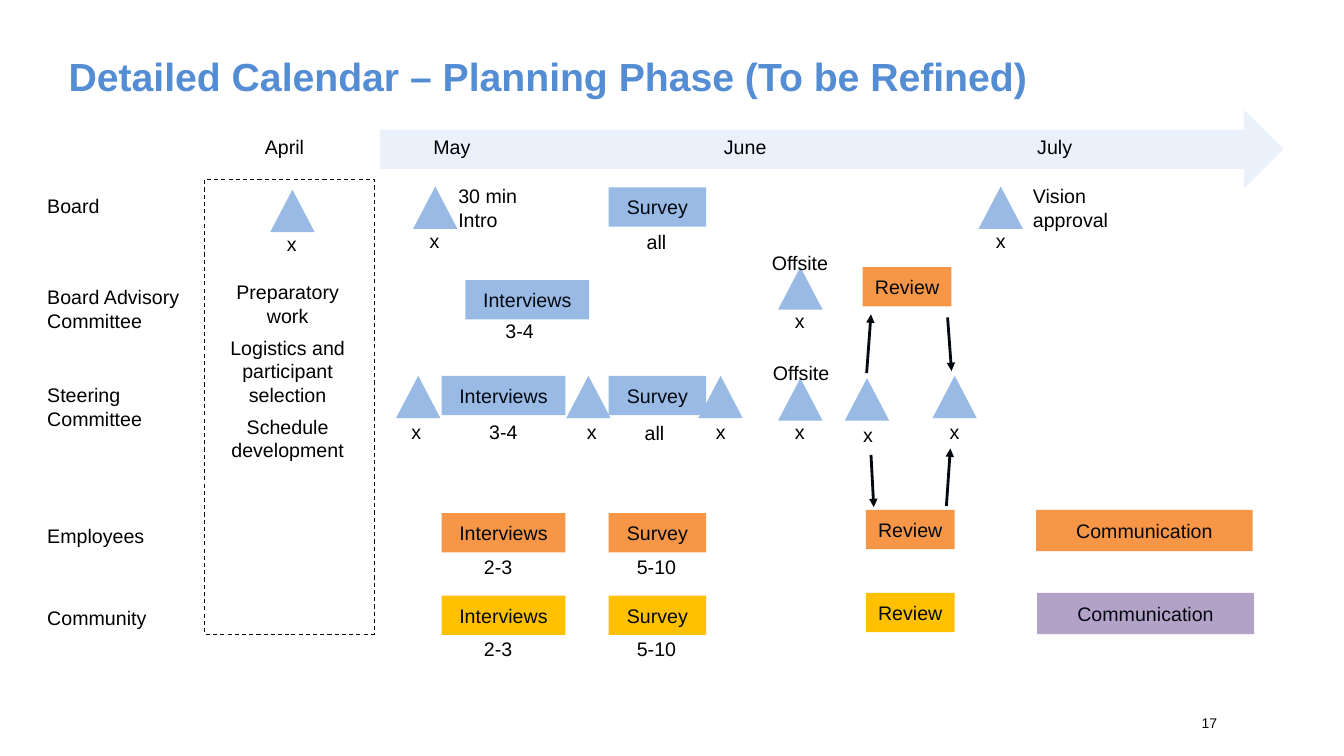
"""Build the planning phase calendar slide."""
from lxml import etree
from pptx import Presentation
from pptx import util as u
from pptx.dml.color import RGBColor
from pptx.enum import dml, shapes, text
from pptx.oxml import ns

COLORS = {
    "title": "548DD4", "number": "03070C", "text": "000000", "ink": "040910",
    "band": "EAF1FA", "blue": "98BAE5", "orange": "F79646", "gold": "FFC000",
    "purple": "B3A2C7",
}
LEFT, CENTER = text.PP_ALIGN.LEFT, text.PP_ALIGN.CENTER

presentation = Presentation()
presentation.slide_width = u.Cm(33.87)
presentation.slide_height = u.Cm(19.05)
slide = presentation.slides.add_slide(presentation.slide_layouts[6])


def add_text(left, top, width, height, paragraphs, align=LEFT, size=14, color="text", after=6):
    box = slide.shapes.add_textbox(u.Cm(left), u.Cm(top), u.Cm(width), u.Cm(height))
    frame = box.text_frame
    frame.word_wrap = True
    for index, content in enumerate(paragraphs):
        paragraph = frame.add_paragraph() if index else frame.paragraphs[0]
        paragraph.text = content
        paragraph.alignment = align
        paragraph.space_after = u.Pt(after)
        paragraph.font.name = "Arial"
        paragraph.font.size = u.Pt(size)
        paragraph.font.color.rgb = RGBColor.from_string(COLORS[color])
    return frame


def add_block(kind, left, top, width, height, fill, label=""):
    shape = slide.shapes.add_shape(kind, u.Cm(left), u.Cm(top), u.Cm(width), u.Cm(height))
    shape.shadow.inherit = False
    shape.line.fill.background()
    if fill:
        shape.fill.solid()
        shape.fill.fore_color.rgb = RGBColor.from_string(COLORS[fill])
    else:
        shape.fill.background()
    if label:
        shape.text_frame.vertical_anchor = text.MSO_ANCHOR.MIDDLE
        paragraph = shape.text_frame.paragraphs[0]
        paragraph.text = label
        paragraph.alignment = CENTER
        paragraph.font.name = "Arial"
        paragraph.font.size = u.Pt(14)
        paragraph.font.color.rgb = RGBColor.from_string(COLORS["ink"])
    return shape


title = add_text(1.73, 1.32, 28.78, 1.27, ["Detailed Calendar – Planning Phase (To be Refined)"],
                 size=28, color="title", after=0)
title.paragraphs[0].font.bold = True
number = add_text(30.28, 17.7, 1.12, 1.02, ["17"], size=10, color="number", after=0)
number.vertical_anchor = text.MSO_ANCHOR.MIDDLE
for frame in (title, number):
    frame.margin_left = frame.margin_top = frame.margin_bottom = 0
title.margin_right = 0

add_block(shapes.MSO_SHAPE.RIGHT_ARROW, 9.58, 2.77, 22.76, 1.98, "band")
for month, left in (("April", 4.72), ("May", 8.94), ("June", 16.33), ("July", 24.13)):
    add_text(left, 3.28, 4.9, 0.86, [month], CENTER)

groups = (
    ("Board", 4.75, 0.86),
    ("Board Advisory Committee", 7.06, 1.45),
    ("Steering\nCommittee", 9.53, 1.45),
    ("Employees", 13.08, 0.86),
    ("Community", 15.14, 0.86),
)
for group, top, height in groups:
    add_text(0.94, top, 4.9, height, [group])

preparation = add_block(shapes.MSO_SHAPE.RECTANGLE, 5.16, 4.52, 4.27, 11.46, None)
preparation.line.color.rgb = RGBColor.from_string(COLORS["ink"])
preparation.line.width = u.Pt(0.75)
preparation.line.dash_style = dml.MSO_LINE.DASH
add_text(5.13, 6.93, 4.24, 5.69,
         ["Preparatory work", "Logistics and participant selection", "Schedule development"],
         CENTER)

meetings = (
    (6.81, 4.78, 6.53, 5.72),
    (10.41, 4.7, 10.13, 5.64),
    (24.66, 4.7, 24.4, 5.64),
    (19.61, 6.73, 19.33, 7.67),
    (9.98, 9.47, 9.67, 10.46),
    (14.27, 9.47, 14.09, 10.46),
    (17.6, 9.47, 17.34, 10.46),
    (19.61, 9.53, 19.33, 10.46),
    (21.29, 9.53, 21.05, 10.52),
    (23.5, 9.47, 23.23, 10.46),
)
for left, top, mark_left, mark_top in meetings:
    add_block(shapes.MSO_SHAPE.ISOSCELES_TRIANGLE, left, top, 1.12, 1.07, "blue")
    add_text(mark_left, mark_top, 1.65, 0.86, ["x"], CENTER)

sizes = {"Interviews": (3.12, 0.99), "Survey": (2.46, 0.99),
         "Review": (2.24, 0.99), "Communication": (5.46, 1.04)}
activities = (
    ("Survey", 15.34, 4.72, "blue"),
    ("Interviews", 11.73, 7.06, "blue"),
    ("Interviews", 11.13, 9.47, "blue"),
    ("Survey", 15.34, 9.47, "blue"),
    ("Interviews", 11.13, 12.93, "orange"),
    ("Survey", 15.34, 12.93, "orange"),
    ("Interviews", 11.13, 15.01, "gold"),
    ("Survey", 15.34, 15.01, "gold"),
    ("Review", 21.74, 6.73, "orange"),
    ("Review", 21.82, 12.85, "orange"),
    ("Review", 21.82, 14.94, "gold"),
    ("Communication", 26.11, 12.85, "orange"),
    ("Communication", 26.14, 14.94, "purple"),
)
for activity, left, top, fill in activities:
    add_block(shapes.MSO_SHAPE.RECTANGLE, left, top, *sizes[activity], fill, activity)

counts = (
    ("all", 15.72, 5.66), ("3-4", 12.27, 7.92),
    ("3-4", 11.86, 10.46), ("all", 15.67, 10.49),
    ("2-3", 11.73, 13.87), ("5-10", 15.72, 13.87),
    ("2-3", 11.73, 15.93), ("5-10", 15.72, 15.93),
)
for count, left, top in counts:
    add_text(left, top, 1.65, 0.86, [count], CENTER)

notes = (
    ("30 min\nIntro", 11.3, 4.52, 2.24, 1.45),
    ("Vision\napproval", 25.78, 4.52, 3.35, 1.45),
    ("Offsite", 19.2, 6.2, 2.24, 0.86),
    ("Offsite", 19.23, 8.97, 2.24, 0.86),
)
for note, left, top, width, height in notes:
    add_text(left, top, width, height, [note])

review_arrows = (
    (21.84, 9.4, 21.95, 7.92),
    (23.88, 8, 23.98, 9.35),
    (21.95, 11.46, 22.02, 12.78),
    (23.85, 12.75, 23.95, 11.3),
)
for ends in review_arrows:
    arrow = slide.shapes.add_connector(shapes.MSO_CONNECTOR.STRAIGHT, *map(u.Cm, ends))
    arrow.line.color.rgb = RGBColor.from_string(COLORS["ink"])
    arrow.line.width = u.Pt(2)
    etree.SubElement(arrow.line._get_or_add_ln(), ns.qn("a:tailEnd"), type="triangle")
    etree.SubElement(arrow._element.spPr, ns.qn("a:effectLst"))

presentation.save("out.pptx")
